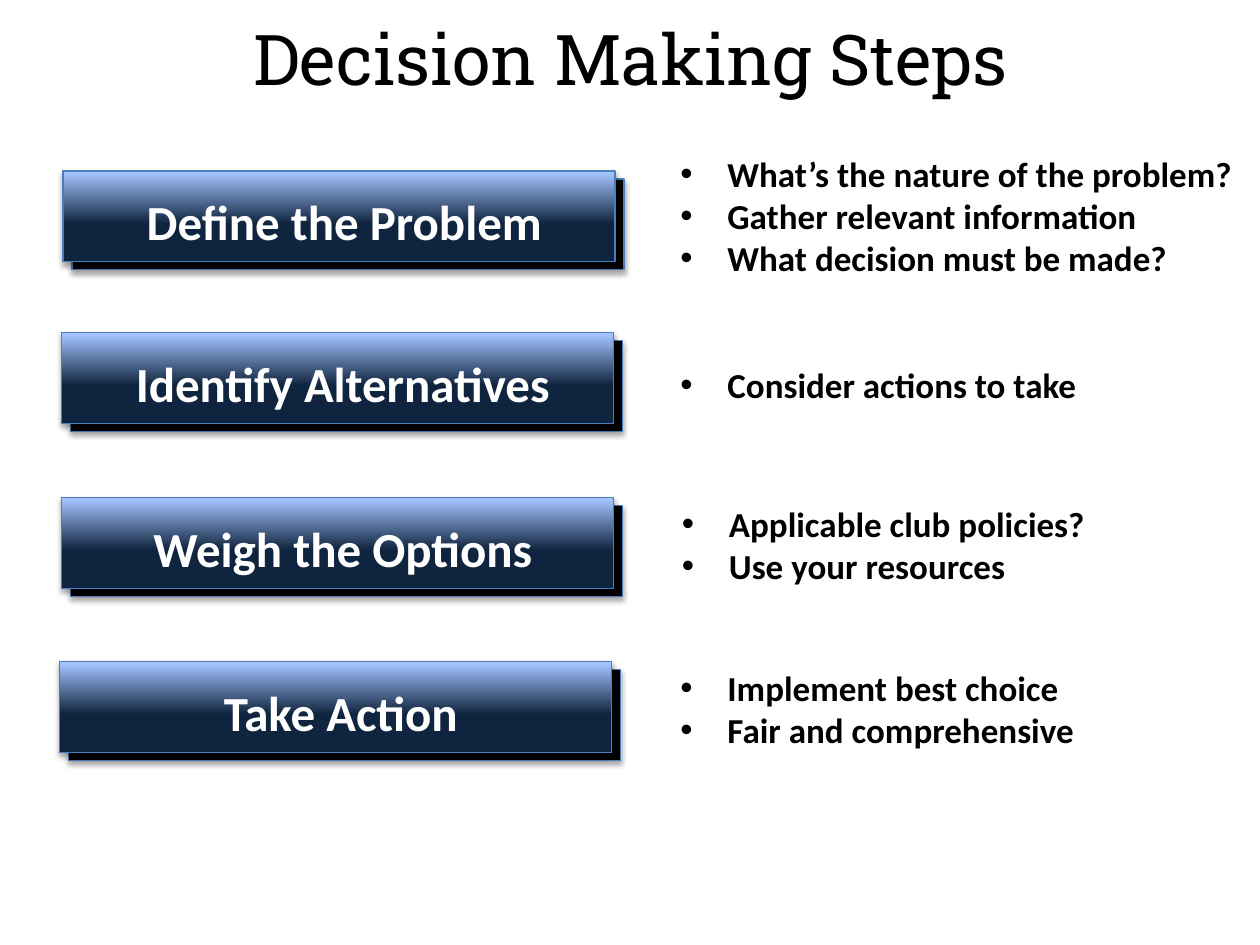
"""Build the slide of four decision making steps."""
from lxml import etree
from pptx import Presentation
from pptx import util as u
from pptx.dml.color import RGBColor
from pptx.enum import shapes, text
from pptx.oxml import ns

COLORS = {"black": "000000", "white": "FFFFFF", "navy": "0F243E",
          "sky": "A4C4FF", "edge": "4B7EBC"}
BAR_WIDTH, BAR_HEIGHT = 11.13, 1.83
STEPS = [
    {"label": "Define the Problem", "bar": (1.27, 3.45), "list": (13.46, 2.95, 11.81, 2.82),
     "points": ["What’s the nature of the problem?", "Gather relevant information",
                "What decision must be made?"]},
    {"label": "Identify Alternatives", "bar": (1.24, 6.71), "list": (13.46, 7.21, 11.13, 1.12),
     "points": ["Consider actions to take"]},
    {"label": "Weigh the Options", "bar": (1.24, 10.03), "list": (13.49, 10.01, 11.13, 1.96),
     "points": ["Applicable club policies?", "Use your resources"]},
    {"label": "Take Action", "bar": (1.2, 13.34), "list": (13.46, 13.31, 11.13, 1.96),
     "points": ["Implement best choice", "Fair and comprehensive"]},
]


def color(name):
    return RGBColor.from_string(COLORS[name])


def place(shape, left, top, width, height):
    shape.left, shape.top = u.Cm(left), u.Cm(top)
    shape.width, shape.height = u.Cm(width), u.Cm(height)


def add_run(paragraph, words, size, color_name, font="Calibri", bold=True):
    run = paragraph.add_run()
    run.text = words
    run.font.name, run.font.size, run.font.bold = font, u.Pt(size), bold
    run.font.color.rgb = color(color_name)


def add_shadow(shape):
    shape.shadow.inherit = False
    effects = shape._element.spPr.find(ns.qn("a:effectLst"))
    shadow = etree.SubElement(effects, ns.qn("a:outerShdw"), blurRad="40000", dist="23000",
                              dir="5400000", rotWithShape="0")
    black = etree.SubElement(shadow, ns.qn("a:srgbClr"), val=COLORS["black"])
    etree.SubElement(black, ns.qn("a:alpha"), val="35000")


def add_bar(group, left, top):
    bar = group.shapes.add_shape(shapes.MSO_SHAPE.RECTANGLE, u.Cm(left), u.Cm(top),
                                 u.Cm(BAR_WIDTH), u.Cm(BAR_HEIGHT))
    bar.line.color.rgb = color("edge")
    bar.line.width = u.Pt(0.75)
    add_shadow(bar)
    return bar


def add_step(slide, label, left, top):
    group = slide.shapes.add_group_shape()
    back = add_bar(group, left + 0.18, top + 0.16)
    back.fill.solid()
    back.fill.fore_color.rgb = color("black")
    front = add_bar(group, left, top)
    front.fill.gradient()
    front.fill.gradient_angle = 90
    for stop, position, name in zip(front.fill.gradient_stops, (0.42, 0.98), ("navy", "sky")):
        stop.position = position
        stop.color.rgb = color(name)
    box = group.shapes.add_textbox(u.Cm(left + 0.36), u.Cm(top + 0.29), u.Cm(10.62), u.Cm(1.45))
    box.text_frame.word_wrap = True
    paragraph = box.text_frame.paragraphs[0]
    paragraph.alignment = text.PP_ALIGN.CENTER
    add_run(paragraph, label, 28, "white")


def add_bullet(paragraph):
    properties = paragraph._p.get_or_add_pPr()
    indent = u.Cm(0.95)
    properties.set("marL", str(indent))
    properties.set("indent", str(-indent))
    etree.SubElement(properties, ns.qn("a:buFont"), typeface="Arial")
    etree.SubElement(properties, ns.qn("a:buChar"), char="•")


def fill_list(placeholder, points, bounds):
    place(placeholder, *bounds)
    frame = placeholder.text_frame
    frame.vertical_anchor = text.MSO_ANCHOR.TOP
    frame.auto_size = text.MSO_AUTO_SIZE.SHAPE_TO_FIT_TEXT
    for index, point in enumerate(points):
        paragraph = frame.add_paragraph() if index else frame.paragraphs[0]
        add_bullet(paragraph)
        paragraph.space_before = u.Pt(0)
        add_run(paragraph, point, 20, "black")


def fill_title(title):
    place(title, 0.13, 0.08, 25.15, 2.16)
    title.text_frame.vertical_anchor = text.MSO_ANCHOR.MIDDLE
    paragraph = title.text_frame.paragraphs[0]
    paragraph.alignment = text.PP_ALIGN.CENTER
    add_run(paragraph, "Decision Making Steps", 40, "black", "Roboto Slab", False)


def main():
    presentation = Presentation()
    presentation.slide_width, presentation.slide_height = u.Cm(25.4), u.Cm(19.05)
    layout = presentation.slide_layouts.get_by_name("Comparison")
    slide = presentation.slides.add_slide(layout)
    fill_title(slide.shapes.title)
    for index, step in enumerate(STEPS, start=1):
        add_step(slide, step["label"], *step["bar"])
        fill_list(slide.placeholders[index], step["points"], step["list"])
    presentation.save("out.pptx")


if __name__ == "__main__":
    main()
